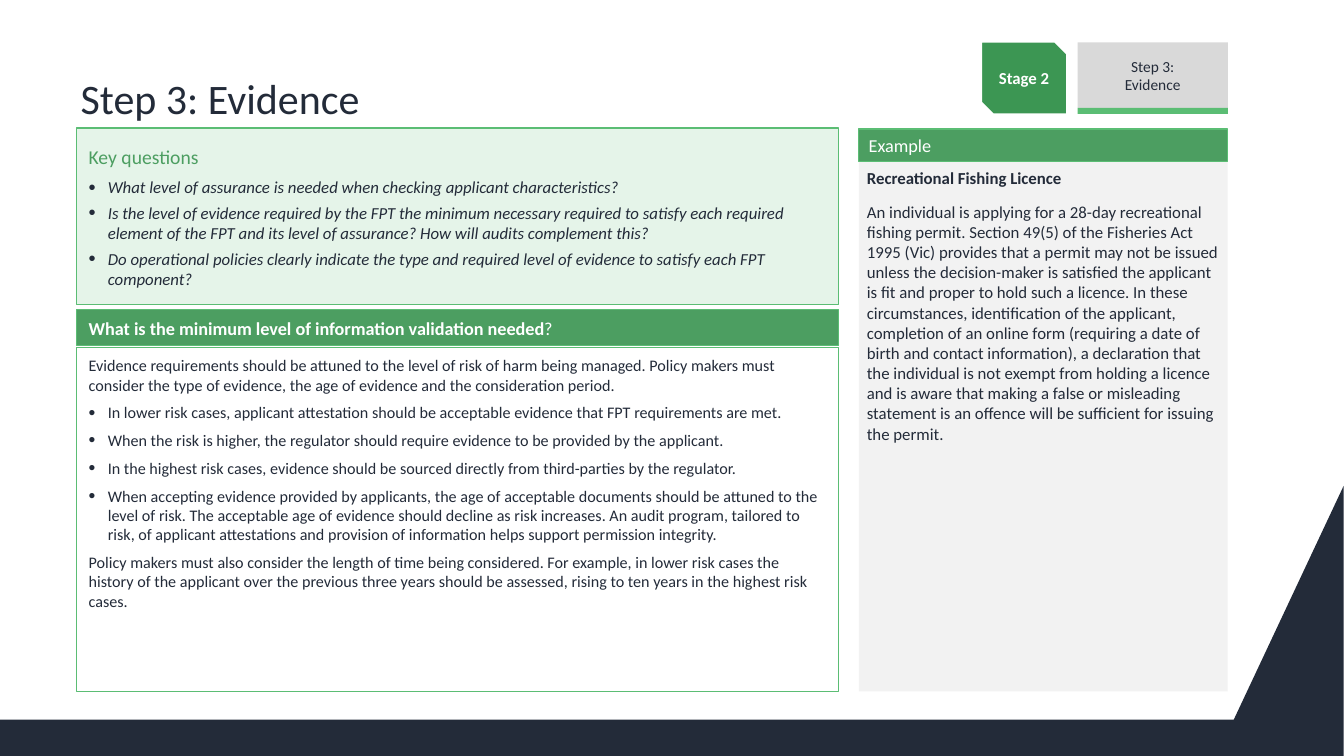
from lxml import etree
from pptx import Presentation, util as u
from pptx.dml.color import RGBColor
from pptx.enum import shapes, text
from pptx.oxml.ns import qn

COLOURS = {
    "navy": "232B39", "white": "FFFFFF", "green": "4C9E61", "stage": "3C9653",
    "bright": "5BBD74", "mint": "E5F4E9", "pale": "F2F2F2", "grey": "D9D9D9",
}
PX = u.Inches(0.01)
LEFT, MAIN_WIDTH = 76, 756
SIDE, SIDE_WIDTH = 852, 366
INDENT = 19
PANEL_INSETS = (12, 8, 12, 8)
MIDDLE = text.MSO_ANCHOR.MIDDLE
CENTRE = text.PP_ALIGN.CENTER
RECT = shapes.MSO_SHAPE.RECTANGLE


def colour(name):
    return RGBColor.from_string(COLOURS[name])


class Page:
    """Current slide together with its text and shape style."""

    def __init__(self, deck, font="Calibri"):
        self.slide = deck.slides.add_slide(deck.slide_layouts[1])
        self.font = font

    def paint(self, shape, fill, line=None, weight=1):
        shape.fill.solid()
        shape.fill.fore_color.rgb = colour(fill)
        if line:
            shape.line.color.rgb = colour(line)
            shape.line.width = u.Pt(weight)
        else:
            shape.line.fill.background()

    def outline(self, points, fill):
        builder = self.slide.shapes.build_freeform(*points[0], scale=PX)
        builder.add_line_segments(points[1:], close=True)
        shape = builder.convert_to_shape()
        shape.shadow.inherit = False
        self.paint(shape, fill)

    def box(self, place, fill, line=None, weight=1, kind=RECT):
        shape = self.slide.shapes.add_shape(kind, *[PX * n for n in place])
        shape.shadow.inherit = False
        self.paint(shape, fill, line, weight)
        return shape

    def placeholder(self, index, place):
        shape = self.slide.placeholders[index]
        shape.left, shape.top, shape.width, shape.height = [PX * n for n in place]
        return shape

    def frame(self, shape, insets=(10, 5, 10, 5), anchor=text.MSO_ANCHOR.TOP):
        frame = shape.text_frame
        frame.word_wrap = True
        frame.auto_size = text.MSO_AUTO_SIZE.NONE
        frame.vertical_anchor = anchor
        (frame.margin_left, frame.margin_top,
         frame.margin_right, frame.margin_bottom) = [PX * n for n in insets]

    def para(self, shape, words, size, ink="navy", bold=False, italic=False,
             align=text.PP_ALIGN.LEFT, before=0, after=0, spacing=1.0, bullet=False):
        frame = shape.text_frame
        para = frame.paragraphs[0]
        if para.runs:
            para = frame.add_paragraph()
        para.alignment = align
        para.space_before, para.space_after = u.Pt(before), u.Pt(after)
        para.line_spacing = spacing
        self.mark(para, bullet)
        for number, line in enumerate(words.split("\n")):
            if number:
                para.add_line_break()
            self.span(para, line, size, ink, bold, italic)
        return para

    def span(self, para, words, size, ink="navy", bold=False, italic=False):
        span = para.add_run()
        span.text = words
        font = span.font
        font.name, font.size, font.bold, font.italic = self.font, u.Pt(size), bold, italic
        font.color.rgb = colour(ink)

    def mark(self, para, bullet):
        props = para._p.get_or_add_pPr()
        indent = PX * INDENT if bullet else 0
        props.set("marL", str(indent))
        props.set("indent", str(-indent))
        if bullet:
            etree.SubElement(props, qn("a:buSzPct")).set("val", "120000")
            etree.SubElement(props, qn("a:buFont")).set("typeface", "Arial")
            etree.SubElement(props, qn("a:buChar")).set("char", "•")
        else:
            etree.SubElement(props, qn("a:buNone"))


def main():
    deck = Presentation()
    deck.slide_width, deck.slide_height = u.Inches(13.333), u.Inches(7.5)
    page = Page(deck)

    # Footer band with its rising corner
    page.outline([(1224, 714), (0, 714), (0, 752), (1333, 752), (1333, 482)], "navy")

    # Title
    title = page.placeholder(0, (LEFT, 15, 1143, 113))
    page.frame(title, (4, 5, 4, 5), text.MSO_ANCHOR.BOTTOM)
    page.para(title, "Step 3: Evidence", 30, spacing=0.9)

    # Example column
    example = page.placeholder(1, (SIDE, 158, SIDE_WIDTH, 528))
    page.paint(example, "pale")
    page.frame(example, (8, 8, 8, 8))
    page.para(example, "Recreational Fishing Licence", 12, bold=True, before=10)
    page.para(
        example,
        "An individual is applying for a 28-day recreational fishing permit. "
        "Section 49(5) of the Fisheries Act 1995 (Vic) provides that a permit may not be "
        "issued unless the decision-maker is satisfied the applicant is fit and proper to "
        "hold such a licence. In these circumstances, identification of the applicant, "
        "completion of an online form (requiring a date of birth and contact information), "
        "a declaration that the individual is not exempt from holding a licence and is "
        "aware that making a false or misleading statement is an offence will be "
        "sufficient for issuing the permit.", 12, before=10)
    header = page.box((SIDE, 128, SIDE_WIDTH, 32), "green", "bright", 0.75)
    page.frame(header, anchor=MIDDLE)
    page.para(header, "Example", 13, "white")

    # Validation heading and guidance
    heading = page.box((LEFT, 307, MAIN_WIDTH, 36), "green", "bright")
    page.frame(heading, (12, 8, 12, 4), MIDDLE)
    question = page.para(
        heading, "What is the minimum level of information validation needed", 13,
        "white", bold=True, spacing=0.9)
    page.span(question, "?", 13, "white")

    guidance = page.box((LEFT, 345, MAIN_WIDTH, 341), "white", "bright")
    page.frame(guidance, PANEL_INSETS)
    for bullet, words in [
        (False, "Evidence requirements should be attuned to the level of risk of harm being "
                "managed. Policy makers must consider the type of evidence, the age of "
                "evidence and the consideration period."),
        (True, "In lower risk cases, applicant attestation should be acceptable evidence "
               "that FPT requirements are met."),
        (True, "When the risk is higher, the regulator should require evidence to be "
               "provided by the applicant."),
        (True, "In the highest risk cases, evidence should be sourced directly from "
               "third-parties by the regulator."),
        (True, "When accepting evidence provided by applicants, the age of acceptable "
               "documents should be attuned to the level of risk. The acceptable age of "
               "evidence should decline as risk increases. An audit program, tailored to "
               "risk, of applicant attestations and provision of information helps support "
               "permission integrity."),
        (False, "Policy makers must also consider the length of time being considered. For "
                "example, in lower risk cases the history of the applicant over the previous "
                "three years should be assessed, rising to ten years in the highest risk "
                "cases."),
    ]:
        page.para(guidance, words, 11.5, after=6, bullet=bullet)

    # Stage and step markers
    stage = page.box((973, 41, 86, 73), "stage", "white", 2,
                     shapes.MSO_SHAPE.SNIP_2_DIAG_RECTANGLE)
    page.frame(stage, anchor=MIDDLE)
    page.para(stage, "Stage 2", 12, "white", bold=True, align=CENTRE)
    step = page.box((1069, 42, 149, 65), "grey")
    page.frame(step, anchor=MIDDLE)
    page.para(step, "Step 3:\nEvidence", 11, align=CENTRE)
    page.box((1069, 107, 149, 6), "bright")

    # Key questions
    questions = page.box((LEFT, 127, MAIN_WIDTH, 175), "mint", "bright")
    page.frame(questions, PANEL_INSETS, MIDDLE)
    page.para(questions, "Key questions", 14, "green", after=6, spacing=1.07)
    for words in [
        "What level of assurance is needed when checking applicant characteristics?",
        "Is the level of evidence required by the FPT the minimum necessary required to "
        "satisfy each required element of the FPT and its level of assurance? How will "
        "audits complement this?",
        "Do operational policies clearly indicate the type and required level of evidence "
        "to satisfy each FPT component?",
    ]:
        page.para(questions, words, 12, italic=True, after=4, bullet=True)

    deck.save("out.pptx")


if __name__ == "__main__":
    main()
